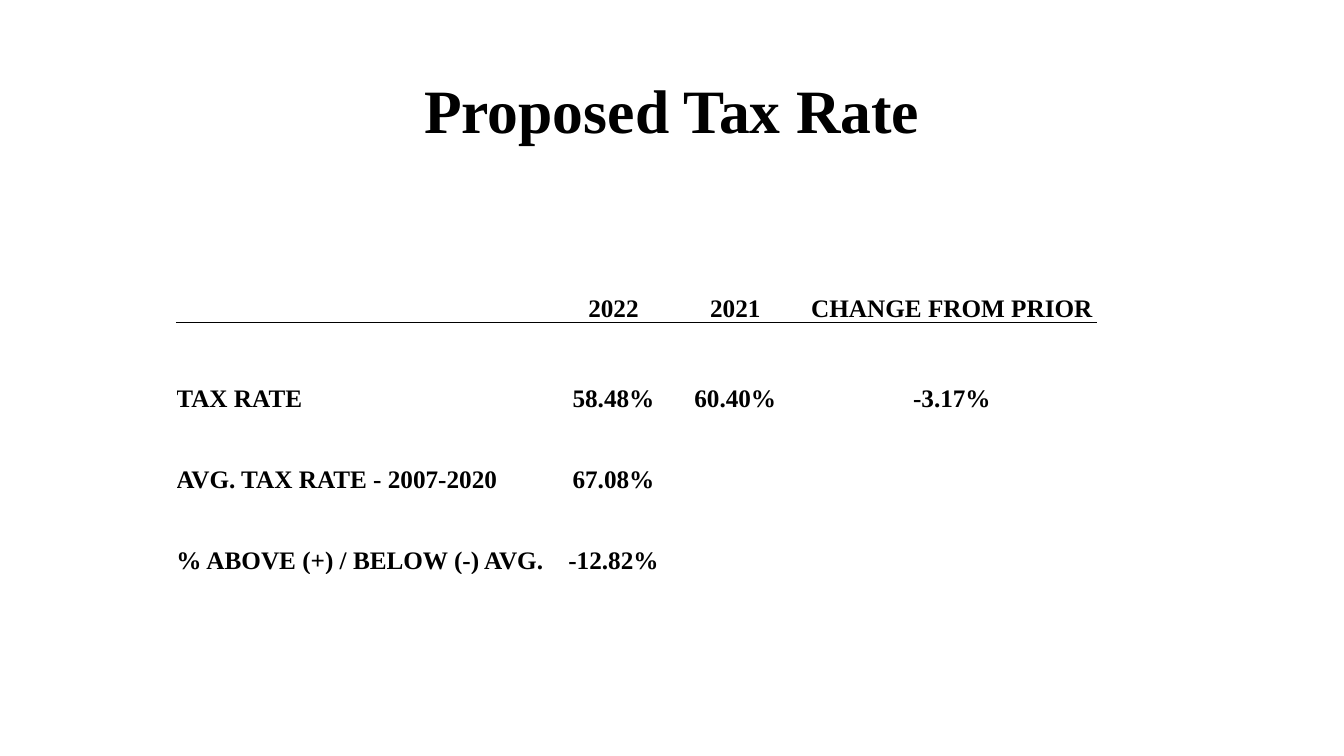
from dataclasses import dataclass

from lxml.etree import SubElement
from pptx import Presentation
from pptx.dml.color import RGBColor
from pptx.enum.text import MSO_ANCHOR as Anchor, PP_ALIGN as Align
from pptx.oxml.ns import qn
from pptx.util import Pt


@dataclass
class Theme:
    font: str = "Times New Roman"
    ink: str = "000000"
    title: int = 44
    body: int = 18
    rule: float = 0.5


theme = Theme()


def write(frame, text, size=theme.body, align=Align.CENTER, space=1.0):
    para = frame.paragraphs[0]
    para.alignment = align
    para.line_spacing = space
    run = para.add_run()
    run.text = text
    font = run.font
    font.name, font.size, font.bold = theme.font, Pt(size), True
    font.color.rgb = RGBColor.from_string(theme.ink)


def add_rule(cell, side):
    """Draw a thin line on one side of a cell, "T" or "B"."""
    props = cell._tc.get_or_add_tcPr()
    line = SubElement(props, qn(f"a:ln{side}"), w=str(Pt(theme.rule)))
    fill = SubElement(line, qn("a:solidFill"))
    SubElement(fill, qn("a:srgbClr"), val=theme.ink)


deck = Presentation()
deck.slide_width, deck.slide_height = Pt(960), Pt(540)
slide = deck.slides.add_slide(deck.slide_layouts[6])

title = slide.shapes.add_textbox(Pt(66), Pt(28.75), Pt(828), Pt(104.4)).text_frame
title.word_wrap = True
title.vertical_anchor = Anchor.MIDDLE
write(title, "Proposed Tax Rate", size=theme.title, space=0.9)

rows = [
    ["", "2022", "2021", "CHANGE FROM PRIOR", ""],
    ["TAX RATE", "58.48%", "60.40%", "-3.17%", ""],
    ["AVG. TAX RATE - 2007-2020", "67.08%", "", "", ""],
    ["% ABOVE (+) / BELOW (-) AVG.", "-12.82%", "", "", ""],
]
widths = [277, 70.5, 103.5, 103, 103]
heights = [57.6, 64.8, 57.6, 57.6]

table = slide.shapes.add_table(
    len(rows), len(widths), Pt(126), Pt(172.8), Pt(sum(widths)), Pt(sum(heights))
).table
table.first_row = table.horz_banding = False
for col, width in zip(table.columns, widths):
    col.width = Pt(width)
for row, height in zip(table.rows, heights):
    row.height = Pt(height)
for r in (0, 1):
    table.cell(r, 3).merge(table.cell(r, 4))

for r, row in enumerate(rows):
    for c, text in enumerate(row):
        cell = table.cell(r, c)
        if r < 2:
            add_rule(cell, "BT"[r])
        cell.fill.background()
        cell.vertical_anchor = Anchor.BOTTOM
        cell.margin_left = cell.margin_right = Pt(0)
        cell.margin_top = cell.margin_bottom = Pt(0)
        if text:
            write(cell.text_frame, text, align=Align.CENTER if c else Align.LEFT)

deck.save("out.pptx")
